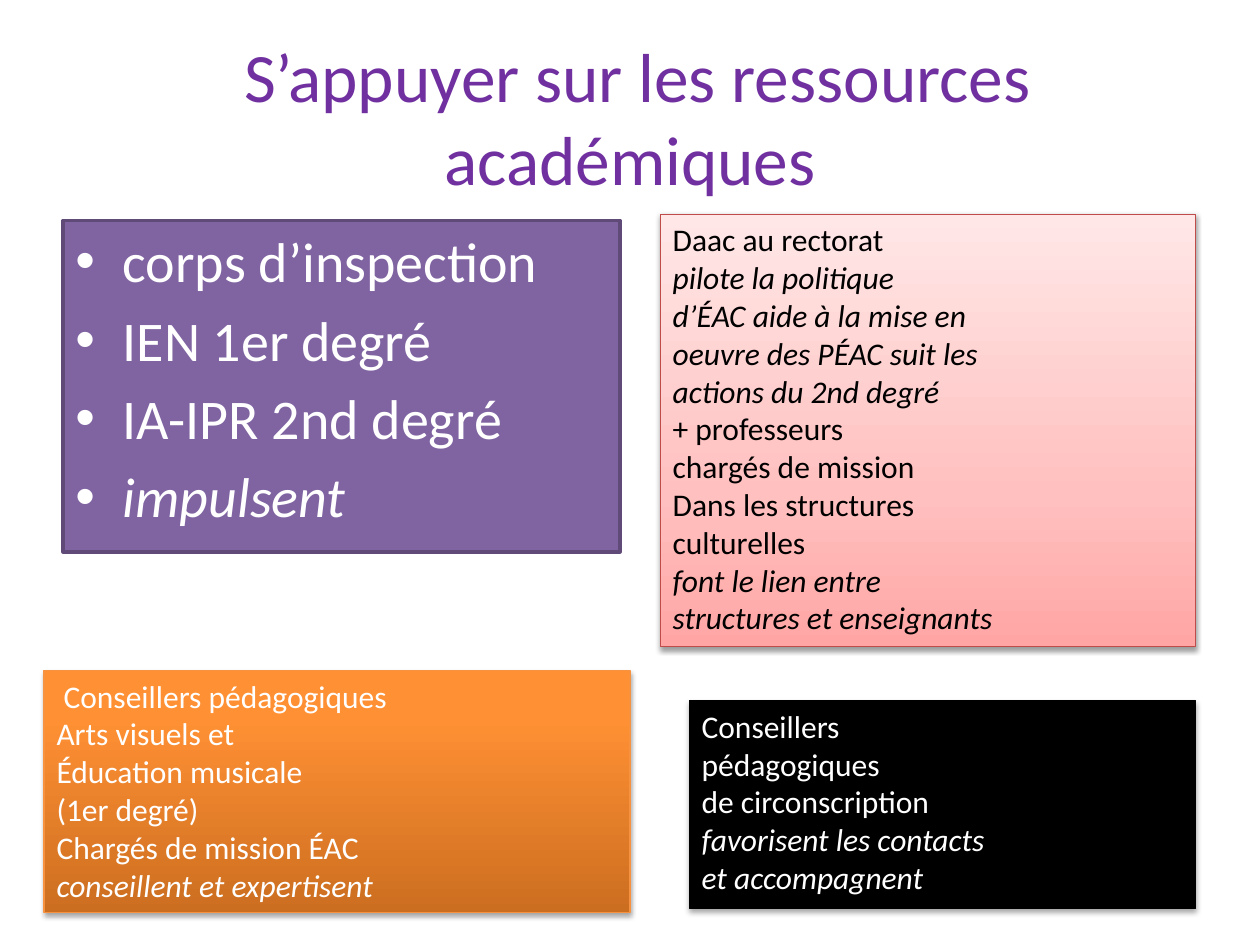
from dataclasses import dataclass
from typing import Optional

from lxml import etree
from pptx import Presentation, util as u
from pptx.dml.color import RGBColor
from pptx.enum import shapes, text
from pptx.oxml import ns

Pt = u.Pt
FONT = "Calibri"
WHITE = RGBColor(0xFF, 0xFF, 0xFF)
BLACK = RGBColor(0, 0, 0)
TITLE_PURPLE = RGBColor(0x70, 0x30, 0xA0)
PURPLE = RGBColor(0x80, 0x64, 0xA2)
DARK_PURPLE = RGBColor(0x5F, 0x4A, 0x78)
RED = RGBColor(0xBF, 0x4C, 0x48)
ORANGE = RGBColor(0xF6, 0x92, 0x40)
# Gradient stops: position in percent, colour
PINKS = ((0, RGBColor(0xFF, 0xA6, 0xA5)), (35, RGBColor(0xFF, 0xC0, 0xBF)),
         (100, RGBColor(0xFF, 0xE7, 0xE7)))
ORANGES = ((0, RGBColor(0xCC, 0x6E, 0x20)), (80, RGBColor(0xFF, 0x90, 0x34)),
           (100, RGBColor(0xFF, 0x91, 0x36)))


@dataclass
class Shadow:
    alpha: int
    distance: float
    blur: float = 3.1


@dataclass
class Box:
    left: float
    top: float
    width: float
    height: float
    lines: list[str]
    italic: set[int]  # indices of the italic lines
    line: RGBColor
    fill: Optional[RGBColor] = None
    stops: tuple = ()
    color: RGBColor = WHITE
    size: float = 18
    line_width: float = 0.75
    shadow: Optional[Shadow] = None
    bullets: bool = False


BOXES = [
    Box(36, 126, 318.24, 189.36,
        ["corps d’inspection", "IEN 1er degré", "IA-IPR 2nd degré", "impulsent"],
        {3}, DARK_PURPLE, fill=PURPLE, size=32, line_width=2, bullets=True),
    Box(377.28, 122.4, 306, 246.96,
        ["Daac au rectorat", "pilote la politique", "d’ÉAC aide à la mise en",
         "oeuvre des PÉAC suit les", "actions du 2nd degré", "+ professeurs",
         "chargés de mission", "Dans les structures", "culturelles",
         "font le lien entre", "structures et enseignants"],
        {1, 2, 3, 4, 9, 10}, RED, stops=PINKS, color=BLACK, shadow=Shadow(38, 1.6)),
    Box(25.2, 383.04, 334.8, 138.24,
        [" Conseillers pédagogiques", "Arts visuels et", "Éducation musicale",
         "(1er degré)", "Chargés de mission ÉAC", "conseillent et expertisent"],
        {5}, ORANGE, stops=ORANGES, shadow=Shadow(35, 1.8)),
    Box(393.84, 400.32, 289.44, 118.8,
        ["Conseillers", "pédagogiques", "de circonscription",
         "favorisent les contacts", "et accompagnent"],
        {3, 4}, BLACK, fill=BLACK, shadow=Shadow(35, 1.8)),
]


def add_xml(parent, tag: str, **attrs):
    """Append a DrawingML element to parent."""
    return etree.SubElement(parent, ns.qn(f"a:{tag}"),
                            {name: str(value) for name, value in attrs.items()})


def style_font(font, size: float, color: RGBColor, italic: bool = False) -> None:
    font.name, font.size, font.italic = FONT, Pt(size), italic
    font.color.rgb = color


def set_gradient(sp, stops: tuple) -> None:
    sp.fill.gradient()
    sp.fill.gradient_angle = 90
    stop_list = sp._element.spPr.find(".//" + ns.qn("a:gsLst"))
    for old in list(stop_list):
        stop_list.remove(old)
    for position, color in stops:
        add_xml(add_xml(stop_list, "gs", pos=position * 1000), "srgbClr", val=color)


def set_shadow(sp, shadow: Shadow) -> None:
    effects = sp._element.spPr.find(ns.qn("a:effectLst"))
    outer = add_xml(effects, "outerShdw", blurRad=Pt(shadow.blur),
                    dist=Pt(shadow.distance), dir=5400000, rotWithShape=0)
    add_xml(add_xml(outer, "srgbClr", val=BLACK), "alpha", val=shadow.alpha * 1000)


def set_bullet(p) -> None:
    props = p._p.get_or_add_pPr()
    props.set("marL", str(Pt(27)))
    props.set("indent", str(-Pt(27)))
    add_xml(add_xml(props, "spcBef"), "spcPct", val=20000)
    add_xml(props, "buFont", typeface="Arial")
    add_xml(props, "buChar", char="•")


def add_title(s, title: str) -> None:
    sp = s.shapes.add_textbox(Pt(36), Pt(21.6), Pt(648), Pt(90))
    tf = sp.text_frame
    tf.word_wrap = True
    tf.vertical_anchor = text.MSO_ANCHOR.MIDDLE
    tf.text = title
    p = tf.paragraphs[0]
    p.alignment = text.PP_ALIGN.CENTER
    style_font(p.runs[0].font, 39.6, TITLE_PURPLE)


def add_box(s, box: Box) -> None:
    sp = s.shapes.add_shape(shapes.MSO_SHAPE.RECTANGLE, Pt(box.left), Pt(box.top),
                            Pt(box.width), Pt(box.height))
    sp.shadow.inherit = False
    if box.stops:
        set_gradient(sp, box.stops)
    else:
        sp.fill.solid()
        sp.fill.fore_color.rgb = box.fill
    sp.line.color.rgb = box.line
    sp.line.width = Pt(box.line_width)
    if box.shadow:
        set_shadow(sp, box.shadow)

    tf = sp.text_frame
    tf.word_wrap = True
    tf.vertical_anchor = text.MSO_ANCHOR.TOP
    if not box.bullets:
        tf.auto_size = text.MSO_AUTO_SIZE.SHAPE_TO_FIT_TEXT
    tf.text = "\n".join(box.lines)
    for i, p in enumerate(tf.paragraphs):
        p.alignment = text.PP_ALIGN.LEFT
        style_font(p.runs[0].font, box.size, box.color, i in box.italic)
        if box.bullets:
            set_bullet(p)


def main() -> None:
    prs = Presentation()
    prs.slide_width, prs.slide_height = Pt(720), Pt(540)
    s = prs.slides.add_slide(prs.slide_layouts[6])
    add_title(s, " S’appuyer sur les ressources académiques")
    for box in BOXES:
        add_box(s, box)
    prs.save("out.pptx")


if __name__ == "__main__":
    main()
